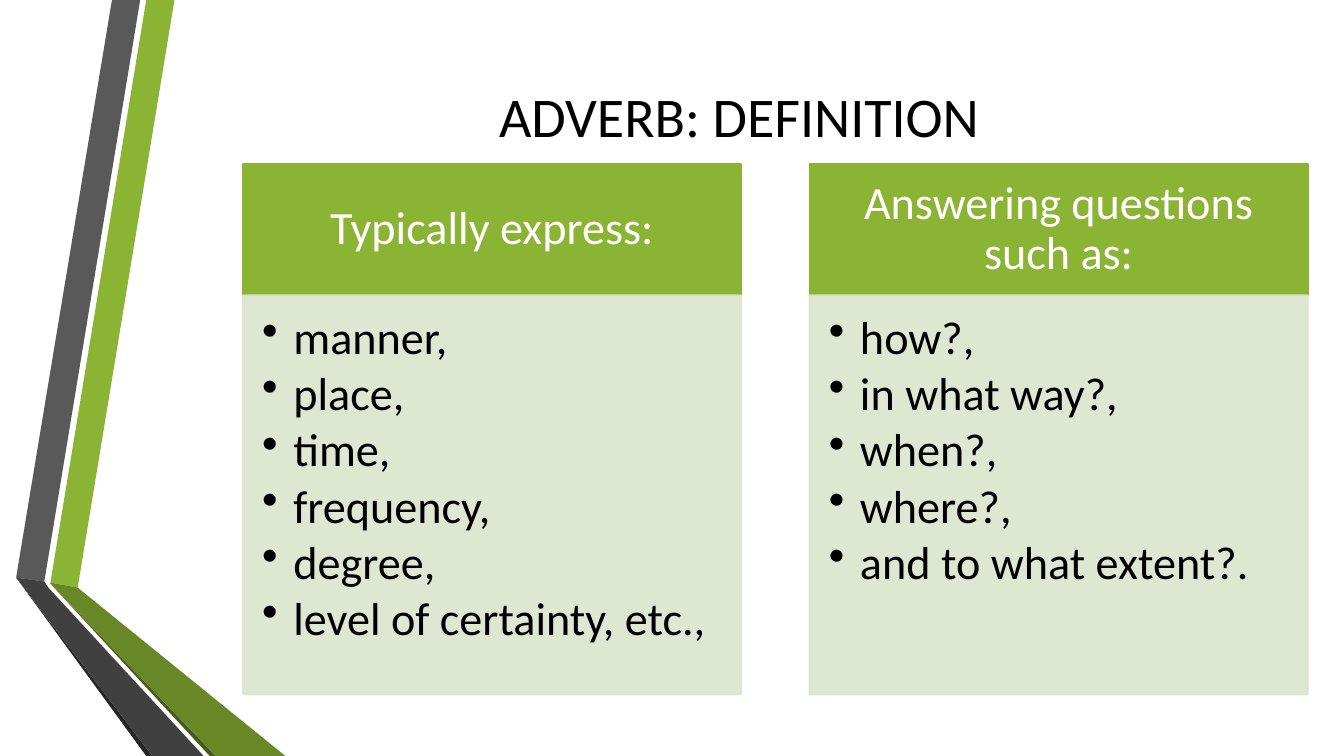
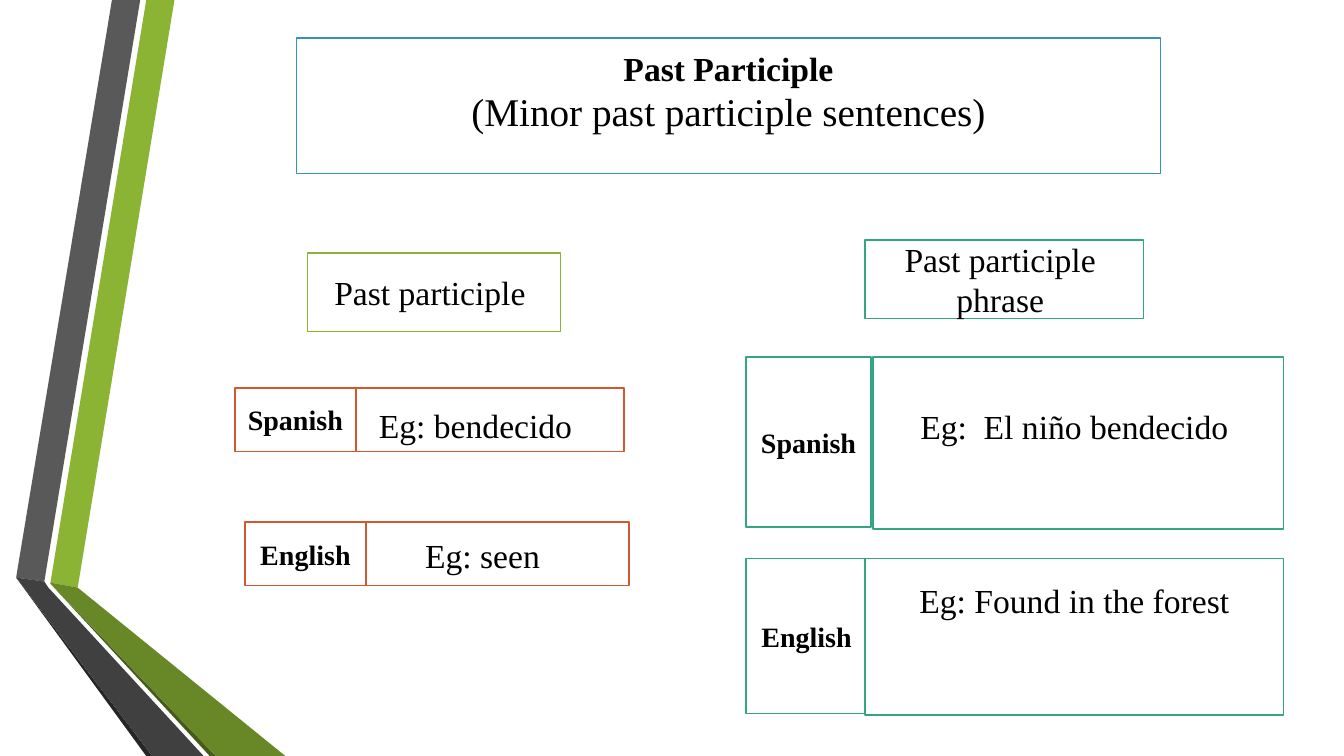
"""Build two grammar slides: the adverb definition and past participle examples."""
from lxml.etree import SubElement
from pptx import Presentation
from pptx.dml.color import RGBColor
from pptx.enum.shapes import MSO_SHAPE
from pptx.enum.text import MSO_ANCHOR, MSO_AUTO_SIZE, PP_ALIGN
from pptx.oxml.ns import qn
from pptx.util import Inches, Pt

BLACK = RGBColor(0x00, 0x00, 0x00)
WHITE = RGBColor(0xFF, 0xFF, 0xFF)
GREEN = RGBColor(0x8B, 0xB4, 0x34)
GREEN_FOLD = RGBColor(0x68, 0x87, 0x27)
GREEN_EDGE = RGBColor(0x46, 0x5A, 0x1A)
GRAY = RGBColor(0x59, 0x59, 0x59)
GRAY_FOLD = RGBColor(0x40, 0x40, 0x40)
GRAY_EDGE = RGBColor(0x26, 0x26, 0x26)
PALE_GREEN = RGBColor(0xDA, 0xE5, 0xCE)
BLUE = RGBColor(0x35, 0x94, 0xB4)
ORANGE = RGBColor(0xD3, 0x57, 0x31)
TEAL = RGBColor(0x33, 0xA5, 0x83)
SANS = "Calibri"
SERIF = "Times New Roman"

presentation = Presentation()
presentation.slide_width = Inches(13.33)
presentation.slide_height = Inches(7.5)
COLUMN = presentation.slide_width / 100
ROW = presentation.slide_height / 100


def write_text(shape, *lines, font=SERIF, size=24, color=BLACK, bold=False,
               align=PP_ALIGN.CENTER, anchor=MSO_ANCHOR.MIDDLE,
               insets=(0.1, 0.05, 0.1, 0.05), spacing=1.0, after=0, bullet=None):
    """Write one paragraph per line; insets are left, top, right, bottom inches."""
    frame = shape.text_frame
    frame.auto_size = MSO_AUTO_SIZE.NONE
    frame.word_wrap = True
    frame.vertical_anchor = anchor
    frame.margin_left, frame.margin_top, frame.margin_right, frame.margin_bottom = map(Inches, insets)
    frame.text = "\n".join(lines)
    for paragraph in frame.paragraphs:
        paragraph.alignment = align
        paragraph.line_spacing = spacing
        paragraph.space_after = Pt(after)
        run_font = paragraph.runs[0].font
        run_font.name, run_font.size, run_font.bold = font, Pt(size), bold
        run_font.color.rgb = color
        if bullet:
            properties = paragraph._p.get_or_add_pPr()
            properties.set("marL", str(Inches(0.31)))
            properties.set("indent", str(-Inches(0.31)))
            SubElement(properties, qn("a:buChar")).set("char", bullet)


def place(shape, left, top, width, height, fill=None, line=None):
    """Place a shape by shares of the slide, in percent, and color it."""
    shape.left, shape.width = int(left * COLUMN), int(width * COLUMN)
    shape.top, shape.height = int(top * ROW), int(height * ROW)
    if fill is not None:
        shape.fill.solid()
        shape.fill.fore_color.rgb = fill
        shape.line.color.rgb = line
        shape.line.width = Pt(1.25)
    return shape


title_only = presentation.slide_layouts[5]
adverb_slide = presentation.slides.add_slide(title_only)
participle_slide = presentation.slides.add_slide(title_only)

ribbons = [
    (GREEN, [(3.75, 77.07), (5.78, 77.73), (12.98, 0), (10.88, 0)]),
    (GRAY, [(10.43, 0), (8.33, 0), (1.2, 76.4), (3.3, 76.93)]),
    (GRAY_EDGE, [(1.2, 76.4), (10.88, 100), (11.33, 100)]),
    (GREEN_EDGE, [(3.75, 77.2), (15.6, 100), (16.05, 100)]),
    (GREEN_FOLD, [(3.75, 77.07), (3.75, 77.2), (16.05, 100), (21.23, 100), (5.78, 77.73)]),
    (GRAY_FOLD, [(15.15, 100), (3.6, 77.73), (3.3, 76.93), (1.2, 76.4), (11.33, 100)]),
]
master_tree = presentation.slide_master.shapes._spTree
for number, (color, shares) in enumerate(ribbons, start=20):
    points = [(x * COLUMN, y * ROW) for x, y in shares]
    builder = adverb_slide.shapes.build_freeform(*points[0])
    builder.add_line_segments(points[1:], close=True)
    ribbon = builder.convert_to_shape()
    ribbon.shadow.inherit = False
    ribbon.fill.solid()
    ribbon.fill.fore_color.rgb = color
    ribbon.line.fill.background()
    ribbon._element.nvSpPr.cNvPr.set("id", str(number))
    master_tree.append(ribbon._element)

title = place(adverb_slide.shapes.title, 13.88, 2.4, 82.22, 25.6)
write_text(title, "ADVERB: DEFINITION", font=SANS, size=40)

panels = [
    ("Typically express:",
     ["manner,", "place,", "time,", "frequency,", "degree,", "level of certainty, etc.,"]),
    ("Answering questions such as:",
     ["how?,", "in what way?,", "when?,", "where?,", "and to what extent?."]),
]
for index, (heading, items) in enumerate(panels):
    left = 18.08 + index * 42.16
    header, body = [adverb_slide.shapes.add_shape(MSO_SHAPE.RECTANGLE, 0, 0, 0, 0) for _ in range(2)]
    header.shadow.inherit = body.shadow.inherit = False
    place(header, left, 21.73, 37.06, 17.33, GREEN, GREEN)
    write_text(header, heading, font=SANS, size=33, color=WHITE, spacing=0.9,
               insets=(0.26, 0.15, 0.26, 0.15))
    place(body, left, 39.07, 37.06, 52.8, PALE_GREEN, PALE_GREEN)
    for color in body._element.spPr.iter(qn("a:srgbClr")):
        SubElement(color, qn("a:alpha")).set("val", "90000")
    write_text(body, *items, font=SANS, size=33, align=PP_ALIGN.LEFT, anchor=MSO_ANCHOR.TOP,
               insets=(0.19, 0.19, 0.26, 0.29), spacing=0.9, after=4.5, bullet="•")

title = place(participle_slide.shapes.title, 22.06, 5.07, 64.29, 17.87, WHITE, BLUE)
write_text(title, "Past Participle", "(Minor past participle sentences)", bold=True,
           anchor=MSO_ANCHOR.TOP, insets=(0.1, 0.09, 0.1, 0.05))
subtitle_font = title.text_frame.paragraphs[1].runs[0].font
subtitle_font.size, subtitle_font.bold = Pt(28), False

label = {"size": 20, "bold": True}
heading = {"insets": (0.1, 0.05, 0.18, 0.05)}
boxes = [
    ("Past participle", (22.88, 33.47, 18.83, 10.4), GREEN, heading),
    ("Past participle phrase", (64.37, 31.73, 20.71, 10.4), TEAL, heading),
    ("Eg: bendecido", (22.21, 51.33, 24.23, 8.4), ORANGE, {"insets": (0.38, 0.15, 0.1, 0.05)}),
    ("Spanish", (17.48, 51.33, 9, 8.4), ORANGE, label),
    ("Eg: seen", (22.58, 69.07, 24.23, 8.4), ORANGE, {"insets": (0.42, 0.07, 0.1, 0.05)}),
    ("English", (18.23, 69.07, 9, 8.4), ORANGE, label),
    ("Spanish", (55.51, 47.2, 9.3, 22.53), TEAL, label),
    ("Eg:  El niño bendecido", (64.97, 47.2, 30.53, 22.8), TEAL,
     {"anchor": MSO_ANCHOR.TOP, "insets": (0.1, 0.49, 0.18, 0.05)}),
    ("English", (55.51, 73.87, 9, 20.53), TEAL, label),
    ("Eg: Found in the forest", (64.37, 73.87, 31.13, 20.67), TEAL,
     {"anchor": MSO_ANCHOR.TOP, "insets": (0.1, 0.21, 0.1, 0.05)}),
]
for text, area, color, text_format in boxes:
    box = participle_slide.shapes.add_shape(MSO_SHAPE.RECTANGLE, 0, 0, 0, 0)
    box.shadow.inherit = False
    place(box, *area, WHITE, color)
    write_text(box, text, **text_format)

presentation.save("out.pptx")
